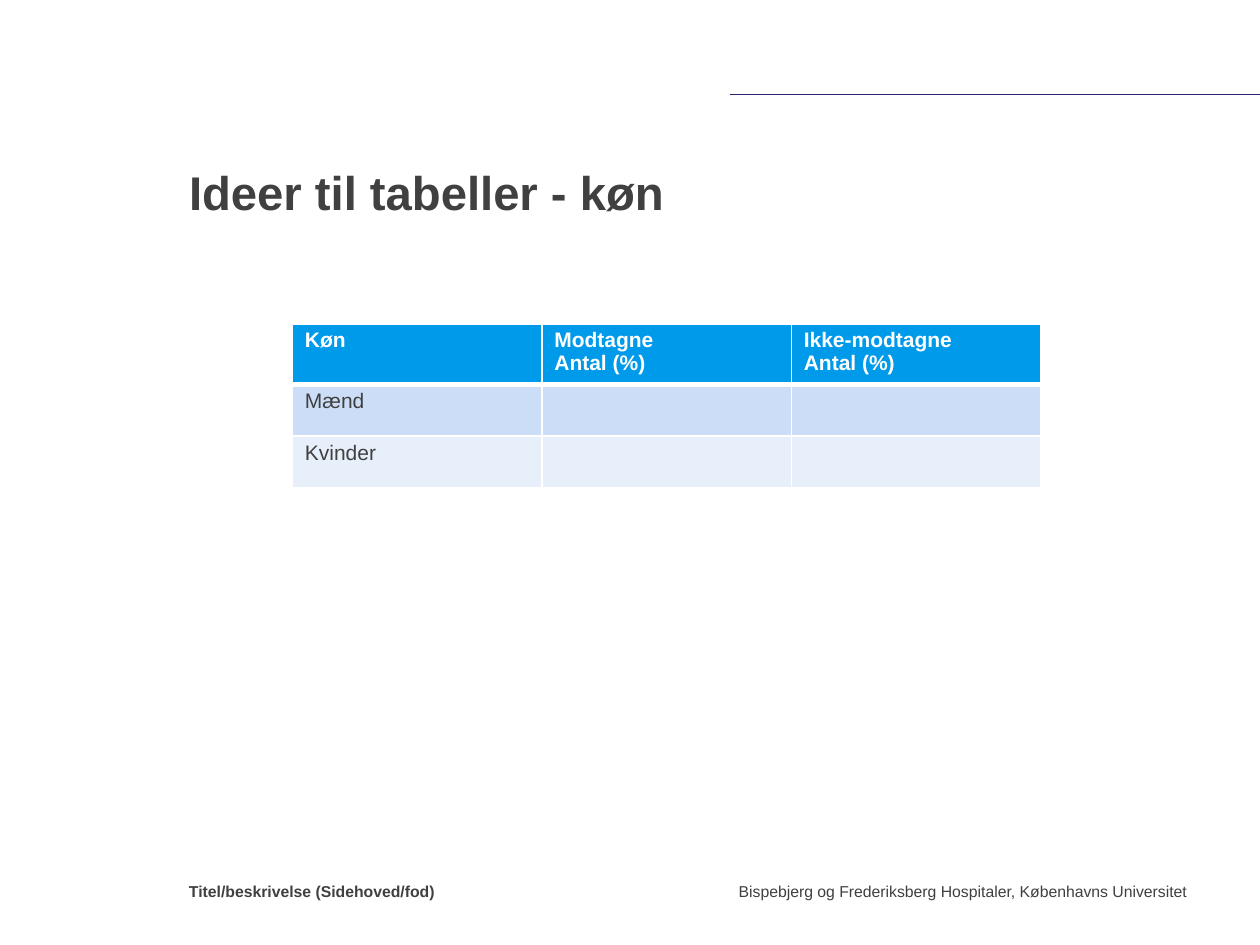
"""Build a slide with a title, a gender table and a two-part footer."""
from lxml import etree
from pptx import Presentation, util as u
from pptx.dml.color import RGBColor
from pptx.enum import shapes, text
from pptx.oxml import parse_xml
from pptx.oxml.ns import nsdecls, qn

HUES = {"ink": "404040", "rule": "2A216A", "white": "FFFFFF",
        "head": "009AEB", "odd": "CCDEF7", "even": "E7EFFB"}


def style(para, size, hue="ink", bold=False):
    font = para.font
    font.name, font.size, font.bold = "Arial", u.Pt(size), bold
    font.color.rgb = RGBColor.from_string(HUES[hue])


def clear(frame):
    frame.margin_left = frame.margin_right = 0
    frame.margin_top = frame.margin_bottom = 0
    frame.word_wrap = True


deck = Presentation()
deck.slide_width, deck.slide_height = u.Inches(10), u.Inches(7.5)
wide, high = deck.slide_width, deck.slide_height
slide = deck.slides.add_slide(deck.slide_layouts[5])
left, right = int(wide * 0.15), int(wide * 0.942)

rule = slide.shapes.add_connector(
    shapes.MSO_CONNECTOR.STRAIGHT, wide, int(high * 0.1), int(wide * 0.579), int(high * 0.1))
rule.line.color.rgb = RGBColor.from_string(HUES["rule"])
rule.line.width = u.Pt(0.5)
etree.SubElement(rule._element.spPr, qn("a:effectLst"))

title = slide.shapes.title
title.left, title.top = left, u.Inches(0.92)
title.width, title.height = right - left, u.Inches(0.83)
frame = title.text_frame
clear(frame)
frame.auto_size = text.MSO_AUTO_SIZE.NONE
frame.vertical_anchor = text.MSO_ANCHOR.BOTTOM
frame.text = "Ideer til tabeller - køn"
para = frame.paragraphs[0]
para.alignment, para.line_spacing = text.PP_ALIGN.LEFT, 0.9
style(para, 27, bold=True)

rows = [("head", 0.48, ["Køn", "Modtagne\nAntal (%)", "Ikke-modtagne\nAntal (%)"]),
        ("odd", 0.41, ["Mænd", "", ""]),
        ("even", 0.41, ["Kvinder", "", ""])]
col = u.Inches(1.98)
grid = slide.shapes.add_table(
    len(rows), 3, u.Inches(2.32), u.Inches(2.57), col * 3,
    u.Inches(sum(tall for _, tall, _ in rows))).table
for item in grid.columns:
    item.width = col
for r, (hue, tall, words) in enumerate(rows):
    grid.rows[r].height = u.Inches(tall)
    head = hue == "head"
    for c, word in enumerate(words):
        cell = grid.cell(r, c)
        cell.text = word
        for para in cell.text_frame.paragraphs:
            para.line_spacing = 0.95
            style(para, 12, "white" if head else "ink", head)
        cell.fill.solid()
        cell.fill.fore_color.rgb = RGBColor.from_string(HUES[hue])
        sides = {"L": 1, "R": 1, "T": 3 if r == 1 else 1, "B": 3 if head else 1}
        for n, (side, thick) in enumerate(sides.items()):
            cell._tc.get_or_add_tcPr().insert(n, parse_xml(
                f'<a:ln{side} {nsdecls("a")} w="{u.Pt(thick)}"><a:solidFill>'
                f'<a:srgbClr val="{HUES["white"]}"/></a:solidFill></a:ln{side}>'))

feet = [("Bispebjerg og Frederiksberg Hospitaler, Københavns Universitet",
         right - u.Inches(4.26), 4.26, text.PP_ALIGN.RIGHT, False),
        ("Titel/beskrivelse (Sidehoved/fod)", left, 3.5, text.PP_ALIGN.LEFT, True)]
for word, x, span, align, bold in feet:
    box = slide.shapes.add_textbox(x, u.Inches(7), u.Inches(span), u.Inches(0.5))
    clear(box.text_frame)
    box.text_frame.text = word
    para = box.text_frame.paragraphs[0]
    para.alignment = align
    style(para, 9, bold=bold)

deck.save("out.pptx")
